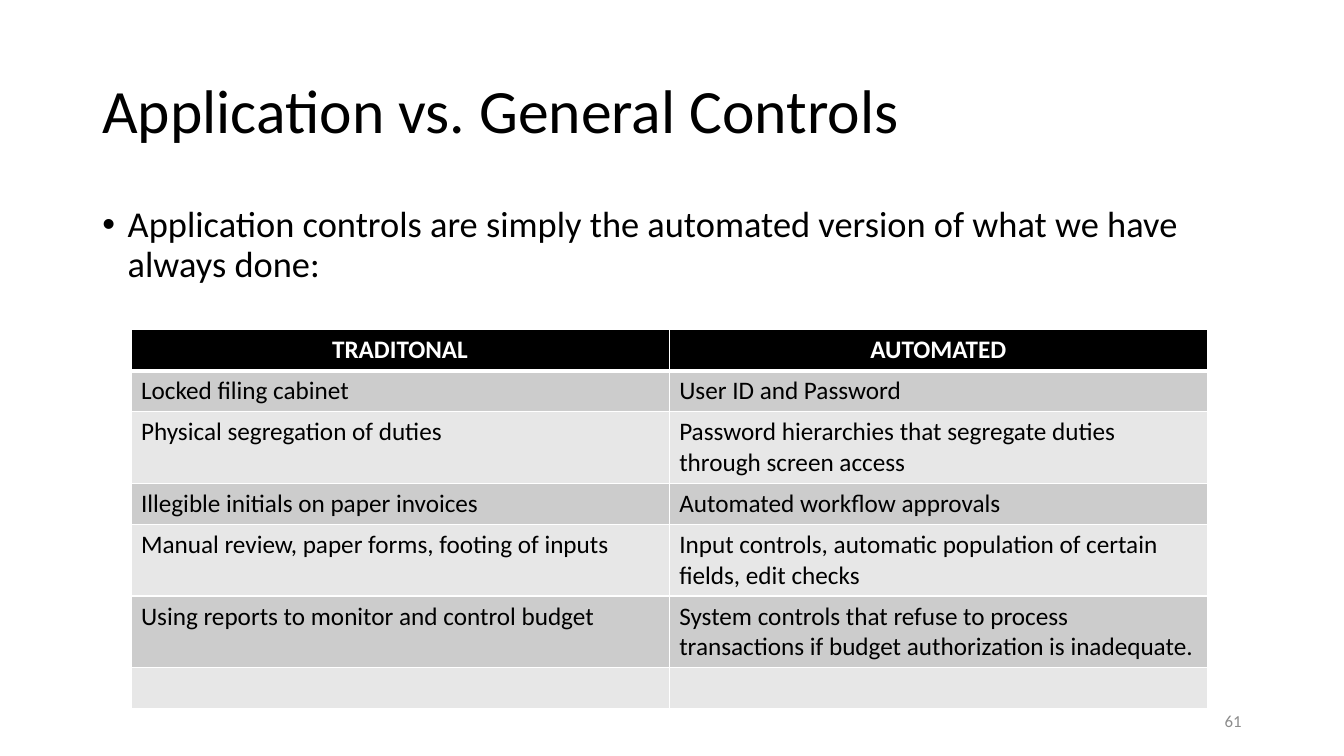
import lxml.etree
import pptx
import pptx.dml.color
import pptx.enum.text
import pptx.oxml.ns
import pptx.util

Cm, Pt = pptx.util.Cm, pptx.util.Pt
ALIGN = pptx.enum.text.PP_ALIGN
ANCHOR = pptx.enum.text.MSO_ANCHOR

COLORS = {
    "text": "000000",
    "page_number": "8C8C8C",
    "header": "000000",
    "header_text": "FFFFFF",
    "border": "FFFFFF",
    "band_dark": "CCCCCC",
    "band_light": "E7E7E7",
}

CONTROLS = [
    ("TRADITONAL", "AUTOMATED"),
    ("Locked filing cabinet", "User ID and Password"),
    ("Physical segregation of duties",
     "Password hierarchies that segregate duties through screen access"),
    ("Illegible initials on paper invoices", "Automated workflow approvals"),
    ("Manual review, paper forms, footing of inputs",
     "Input controls, automatic population of certain fields, edit checks"),
    ("Using reports to monitor and control budget",
     "System controls that refuse to process transactions "
     "if budget authorization is inadequate."),
    ("", ""),
]
TWO_LINE_ROWS = (2, 4, 5)


def rgb(name):
    return pptx.dml.color.RGBColor.from_string(COLORS[name])


def apply(target, formats):
    for attribute, value in formats.items():
        setattr(target, attribute, value)


def add_xml(parent, tag, **attributes):
    return lxml.etree.SubElement(parent, pptx.oxml.ns.qn(tag), attributes)


def write(paragraph, text, size, color, bold=False, **paragraph_formats):
    apply(paragraph, paragraph_formats)
    run = paragraph.add_run()
    run.text = text
    apply(run.font, {"name": "Calibri", "size": Pt(size), "bold": bold})
    run.font.color.rgb = rgb(color)


def add_text(slide, box, text, size, color, anchor, **paragraph_formats):
    frame = slide.shapes.add_textbox(*map(Cm, box)).text_frame
    apply(frame, {"word_wrap": True, "vertical_anchor": anchor})
    write(frame.paragraphs[0], text, size, color, **paragraph_formats)
    return frame.paragraphs[0]


def add_statement(slide, box, text):
    statement = add_text(slide, box, text, 26, "text", ANCHOR.TOP,
                         line_spacing=0.9, space_before=Pt(10))
    properties = statement._p.get_or_add_pPr()
    indent = Cm(0.64)
    properties.set("marL", str(indent))
    properties.set("indent", str(-indent))
    add_xml(properties, "a:buFont", typeface="Arial")
    add_xml(properties, "a:buChar", char="•")


def add_borders(cell, widths):
    properties = cell._tc.get_or_add_tcPr()
    for side, width in widths.items():
        line = add_xml(properties, f"a:ln{side}", w=str(Pt(width)))
        add_xml(add_xml(line, "a:solidFill"), "a:srgbClr", val=COLORS["border"])


def add_comparison(slide, box):
    left, top, width, height = box
    columns = len(CONTROLS[0])
    comparison = slide.shapes.add_table(
        len(CONTROLS), columns, *map(Cm, box)).table
    for column in comparison.columns:
        column.width = Cm(width / columns)

    # One-line rows take 1.03 cm; the two-line rows share the rest
    one_line = 1.03
    two_line = (height - one_line * (len(CONTROLS) - len(TWO_LINE_ROWS))) / len(TWO_LINE_ROWS)
    for r, entries in enumerate(CONTROLS):
        comparison.rows[r].height = Cm(two_line if r in TWO_LINE_ROWS else one_line)
        header = r == 0
        fill = "header" if header else "band_dark" if r % 2 else "band_light"
        for c, entry in enumerate(entries):
            cell = comparison.cell(r, c)
            add_borders(cell, {"L": 1, "R": 1, "T": 3 if r == 1 else 1,
                               "B": 3 if header else 1})
            cell.fill.solid()
            cell.fill.fore_color.rgb = rgb(fill)
            if entry:
                write(cell.text_frame.paragraphs[0], entry, 18,
                      "header_text" if header else "text", header,
                      alignment=ALIGN.CENTER if header else ALIGN.LEFT)


def build_slide(presentation):
    slide = presentation.slides.add_slide(presentation.slide_layouts[6])
    # Title
    add_text(slide, (2.33, 1.02, 29.21, 3.68), "Application vs. General Controls",
             44, "text", ANCHOR.MIDDLE, line_spacing=0.9)
    # Opening statement
    add_statement(slide, (2.33, 5.08, 29.21, 12.09),
                  "Application controls are simply the automated version "
                  "of what we have always done:")
    # Traditional and automated controls
    add_comparison(slide, (3.3, 8.31, 27.13, 9.55))
    # Page number
    add_text(slide, (23.92, 17.65, 7.62, 1.02), "61", 12, "page_number",
             ANCHOR.MIDDLE, alignment=ALIGN.RIGHT)


def main():
    presentation = pptx.Presentation()
    apply(presentation, {"slide_width": Cm(33.87), "slide_height": Cm(19.05)})
    build_slide(presentation)
    presentation.save("out.pptx")


if __name__ == "__main__":
    main()
